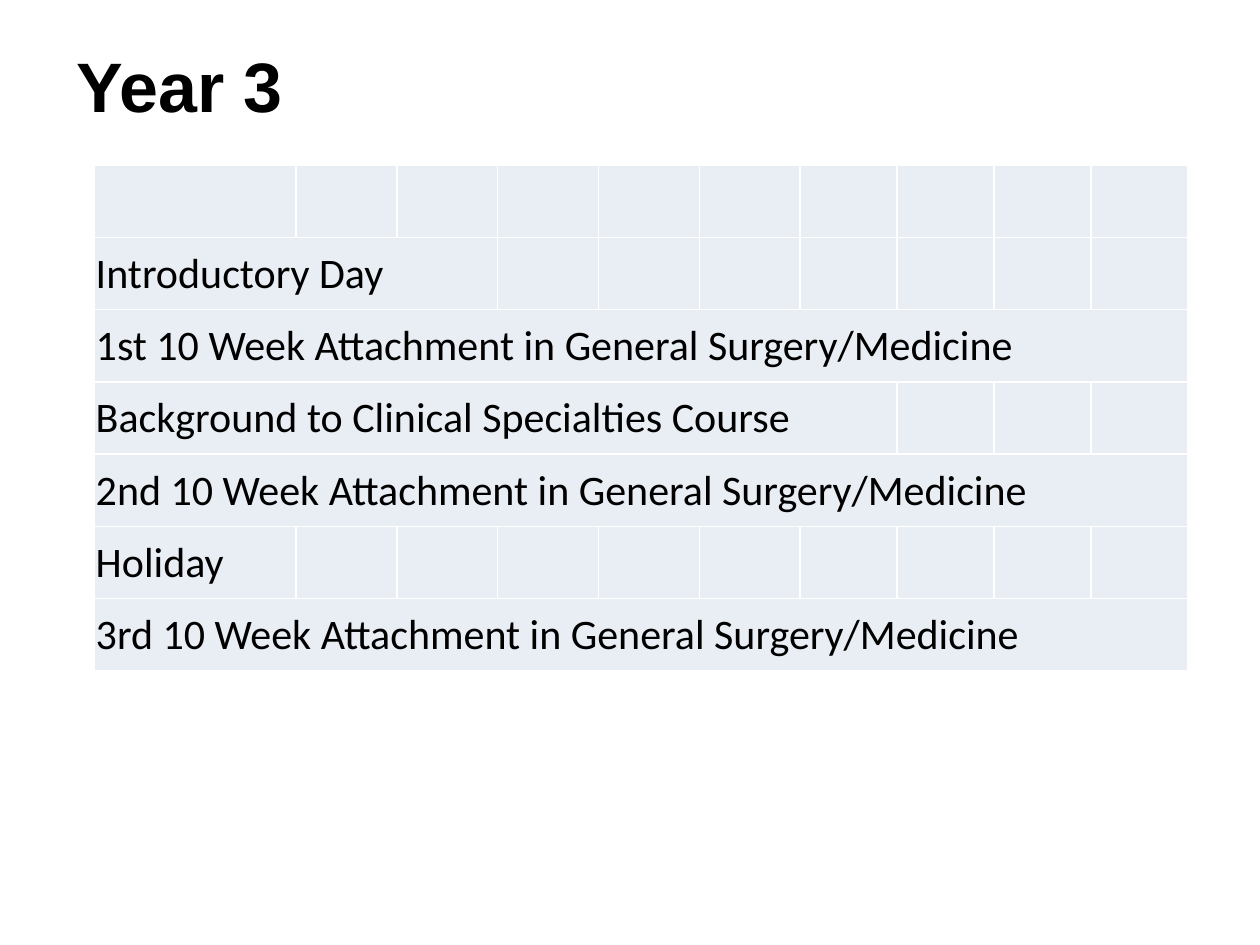
from lxml.etree import SubElement
from pptx import Presentation
from pptx.dml.color import RGBColor
from pptx.enum.text import MSO_ANCHOR
from pptx.oxml.ns import qn
from pptx.util import Inches, Pt

BLACK = RGBColor(0x00, 0x00, 0x00)
WHITE = RGBColor(0xFF, 0xFF, 0xFF)
PALE_BLUE = RGBColor(0xE9, 0xED, 0xF4)

COL_WIDTHS = [1.6] + [0.8] * 5 + [0.77] * 4
ROW_HEIGHT = 0.574
# Text and number of columns it spans
ROWS = [
    ("", 1),
    ("Introductory Day", 3),
    ("1st 10 Week Attachment in General Surgery/Medicine", 10),
    ("Background to Clinical Specialties Course", 7),
    ("2nd 10 Week Attachment in General Surgery/Medicine", 10),
    ("Holiday", 1),
    ("3rd 10 Week Attachment in General Surgery/Medicine", 10),
]


def write_text(tf, text, font, size, bold=False, space_after=0):
    p = tf.paragraphs[0]
    p.space_after = Pt(space_after)
    r = p.add_run()
    r.text = text
    r.font.name = font
    r.font.size = Pt(size)
    r.font.bold = bold
    r.font.color.rgb = BLACK


def set_borders(cell, color, width):
    tc_pr = cell._tc.get_or_add_tcPr()
    for side in ("lnL", "lnR", "lnT", "lnB"):
        ln = SubElement(tc_pr, qn(f"a:{side}"), w=str(Pt(width)))
        fill = SubElement(ln, qn("a:solidFill"))
        SubElement(fill, qn("a:srgbClr"), val=str(color))


prs = Presentation()
prs.slide_width = Inches(10)
prs.slide_height = Inches(7.5)
s = prs.slides.add_slide(prs.slide_layouts[6])

title = s.shapes.add_textbox(Inches(0.51), Inches(0.29), Inches(8.98), Inches(1.26))
title.text_frame.word_wrap = True
write_text(title.text_frame, "Year 3", "Arial", 40, bold=True, space_after=6)

table = s.shapes.add_table(
    len(ROWS), len(COL_WIDTHS), Inches(0.75), Inches(1.31),
    Inches(sum(COL_WIDTHS)), Inches(ROW_HEIGHT * len(ROWS)),
).table
table.first_row = False
table.horz_banding = False
for column, width in zip(table.columns, COL_WIDTHS):
    column.width = Inches(width)

for i, (text, span) in enumerate(ROWS):
    table.rows[i].height = Inches(ROW_HEIGHT)
    for j in range(len(COL_WIDTHS)):
        cell = table.cell(i, j)
        set_borders(cell, WHITE, 1)
        cell.fill.solid()
        cell.fill.fore_color.rgb = PALE_BLUE
    if text:
        cell = table.cell(i, 0)
        if span > 1:
            cell.merge(table.cell(i, span - 1))
        cell.vertical_anchor = MSO_ANCHOR.MIDDLE
        cell.margin_left = cell.margin_right = cell.margin_top = Inches(0.01)
        cell.margin_bottom = Inches(0)
        write_text(cell.text_frame, text, "Calibri", 24)

prs.save("out.pptx")
